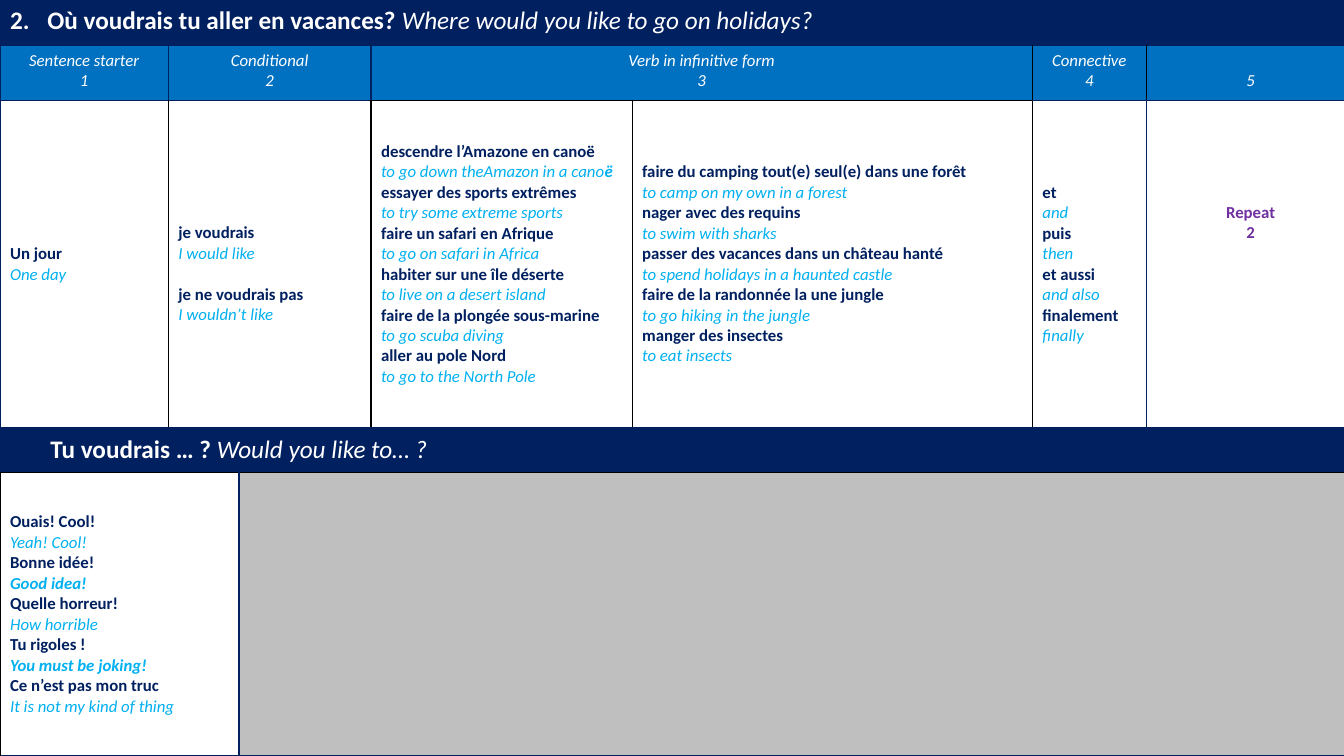
import pptx
import pptx.dml.color
import pptx.enum.text
import pptx.util
from lxml import etree
from pptx.oxml.ns import qn

Inches = pptx.util.Inches
COLORS = {"navy": "002060", "blue": "0070C0", "cyan": "00B0F0", "purple": "7030A0",
          "grey": "BFBFBF", "white": "FFFFFF", "black": "000000"}
CENTER = pptx.enum.text.PP_ALIGN.CENTER
MIDDLE = pptx.enum.text.MSO_ANCHOR.MIDDLE


def style(font, size, color, bold=False, italic=False):
    font.name = "Calibri"
    font.size = pptx.util.Pt(size)
    font.color.rgb = pptx.dml.color.RGBColor.from_string(COLORS[color])
    font.bold = bold
    font.italic = italic


def add_para(cell, text):
    """Return a paragraph holding text, reusing the first one while it is empty."""
    frame = cell.text_frame
    para = frame.paragraphs[0] if not frame.text else frame.add_paragraph()
    para.add_run().text = text
    return para


deck = pptx.Presentation()
deck.slide_width, deck.slide_height = Inches(13.33), Inches(7.5)
page = deck.slides.add_slide(deck.slide_layouts[6])

# Table grid
widths = [1.67, 0.7, 1.31, 2.59, 3.97, 1.13, 0.16, 1.91]
heights = [0.45, 0.55, 3.24, 0.45, 2.81]
table = page.shapes.add_table(len(heights), len(widths), 0, 0,
                              Inches(sum(widths)), Inches(sum(heights))).table
table.first_row = table.horz_banding = False
for column, width in zip(table.columns, widths):
    column.width = Inches(width)
for row, height in zip(table.rows, heights):
    row.height = Inches(height)

# Merges, fills and borders: row, column, columns spanned, fill, sides drawn in black
layout = [
    (0, 0, 5, "navy", ""), (0, 5, 2, "navy", ""), (0, 7, 1, "navy", ""),
    (1, 0, 1, "blue", ""), (1, 1, 2, "blue", ""), (1, 3, 2, "blue", "RB"),
    (1, 5, 1, "blue", "LR"), (1, 6, 2, "blue", "L"),
    (2, 0, 1, "white", "R"), (2, 1, 2, "white", "LR"), (2, 3, 1, "white", "LRTB"),
    (2, 4, 1, "white", "LRTB"), (2, 5, 1, "white", "L"), (2, 6, 2, "white", ""),
    (3, 0, 8, "navy", "B"),
    (4, 0, 2, "white", "LT"), (4, 2, 6, "grey", "T"),
]
for row, column, span, fill, black_sides in layout:
    if span > 1:
        table.cell(row, column).merge(table.cell(row, column + span - 1))
    for offset in range(span):
        cell = table.cell(row, column + offset)
        properties = cell._tc.get_or_add_tcPr()
        for side in "LRTB":
            line = etree.SubElement(properties, qn("a:ln" + side), w="12700")
            solid = etree.SubElement(line, qn("a:solidFill"))
            color = COLORS["black" if side in black_sides else "navy"]
            etree.SubElement(solid, qn("a:srgbClr"), val=color)
        cell.fill.solid()
        cell.fill.fore_color.rgb = pptx.dml.color.RGBColor.from_string(COLORS[fill])

# Question bars
questions = [
    (0, "2.\tOù voudrais tu aller en vacances? ", "Where would you like to go on holidays?"),
    (3, "Tu voudrais … ? ", "Would you like to… ?"),
]
for row, french, english in questions:
    para = add_para(table.cell(row, 0), french)
    span = para.add_run()
    span.text = english
    style(para.runs[0].font, 18, "white", bold=True)
    style(span.font, 18, "white", italic=True)
hanging = table.cell(0, 0).text_frame.paragraphs[0]._p.get_or_add_pPr()
hanging.set("marL", str(Inches(0.37)))
hanging.set("indent", str(-Inches(0.37)))
table.cell(3, 0).margin_left = Inches(0.5)
table.cell(3, 0).vertical_anchor = MIDDLE

# Column headings
headings = {0: ["Sentence starter", "1"], 1: ["Conditional", "2"],
            3: ["Verb in infinitive form", "3"], 5: ["Connective", "4"], 6: ["5"]}
for column, lines in headings.items():
    for text in lines:
        para = add_para(table.cell(1, column), text)
        para.alignment = CENTER
        style(para.font, 12, "white", italic=True)
table.cell(1, 6).margin_top = Inches(0.25)

# Phrases, French and English in turn
phrases = {
    (2, 0): ["Un jour", "One day"],
    (2, 1): ["je voudrais", "I would like", "je ne voudrais pas", "I wouldn’t like"],
    (2, 3): ["descendre l’Amazone en canoë", "to go down theAmazon in a cano",
             "essayer des sports extrêmes", "to try some extreme sports",
             "faire un safari en Afrique", "to go on safari in Africa",
             "habiter sur une île déserte", "to live on a desert island",
             "faire de la plongée sous-marine", "to go scuba diving",
             "aller au pole Nord", "to go to the North Pole"],
    (2, 4): ["faire du camping tout(e) seul(e) dans une forêt", "to camp on my own in a forest",
             "nager avec des requins", "to swim with sharks",
             "passer des vacances dans un château hanté", "to spend holidays in a haunted castle",
             "faire de la randonnée la une jungle", "to go hiking in the jungle",
             "manger des insectes", "to eat insects"],
    (2, 5): ["et", "and", "puis", "then", "et aussi", "and also", "finalement", "finally"],
    (4, 0): ["Ouais! Cool!", "Yeah! Cool!", "Bonne idée!", "Good idea!",
             "Quelle horreur!", "How horrible", "Tu rigoles !", "You must be joking!",
             "Ce n’est pas mon truc", "It is not my kind of thing"],
}
bold_english = ["Good idea!", "You must be joking!"]
for (row, column), lines in phrases.items():
    cell = table.cell(row, column)
    cell.vertical_anchor = MIDDLE
    for index, text in enumerate(lines):
        para = add_para(cell, text)
        if index % 2 == 0:
            style(para.font, 12, "navy", bold=True)
        else:
            style(para.font, 12, "cyan", bold=text in bold_english, italic=True)

# Bold last letter of the canoe phrase
span = table.cell(2, 3).text_frame.paragraphs[1].add_run()
span.text = "ë"
span.font.bold = True

# Gap between the two conditionals
conditional = table.cell(2, 1)
conditional.margin_top = Inches(0.25)
conditional.text_frame.paragraphs[2].space_before = pptx.util.Pt(14.65)

# Repeat note
repeat = table.cell(2, 6)
repeat.vertical_anchor = MIDDLE
repeat.margin_bottom = Inches(0.87)
for text in ["Repeat", "2"]:
    para = add_para(repeat, text)
    para.alignment = CENTER
    style(para.font, 12, "purple", bold=True)

deck.save("out.pptx")
